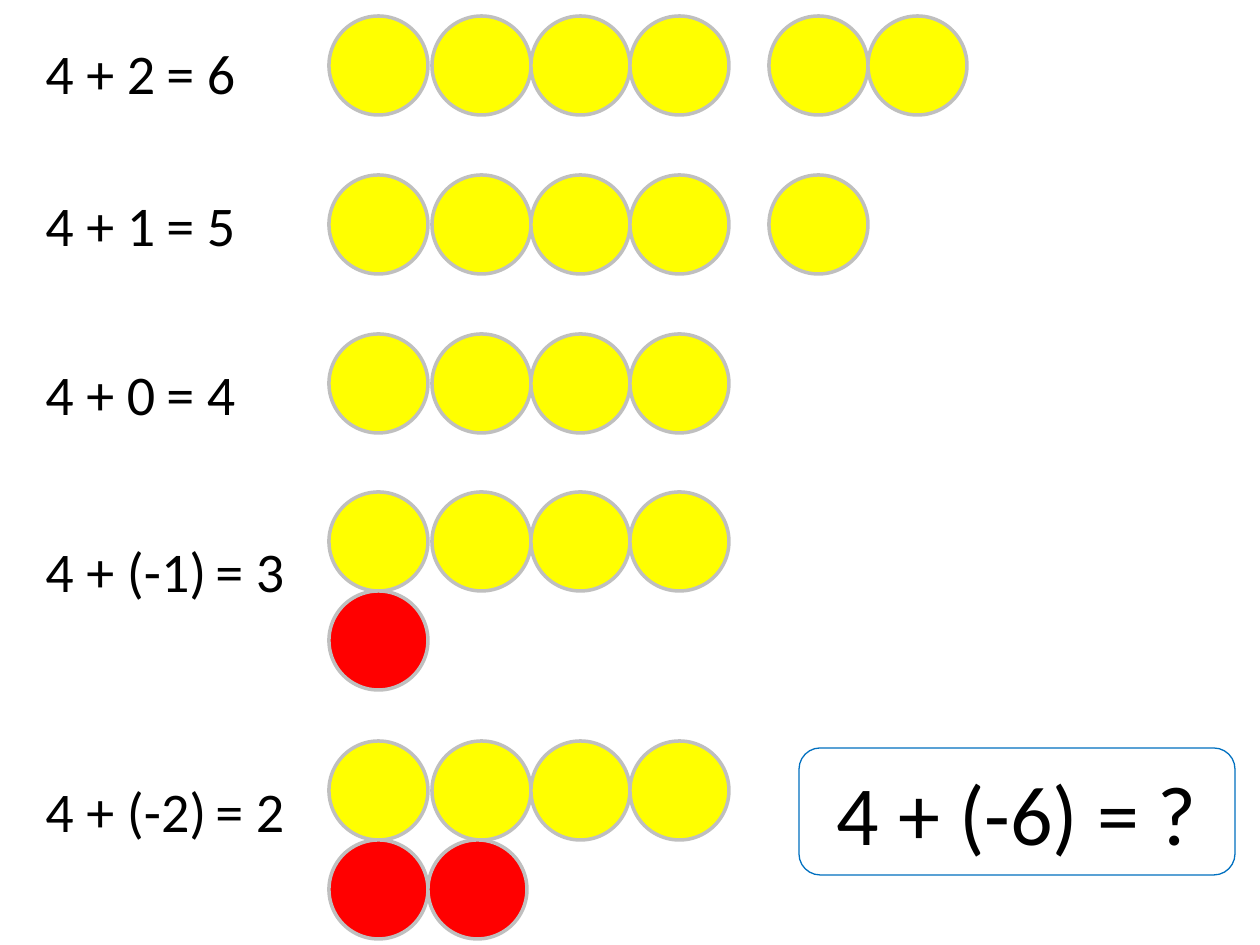
from pptx import Presentation
from pptx.dml.color import RGBColor as RGB
from pptx.enum.shapes import MSO_SHAPE as SHAPE
from pptx.enum.text import MSO_ANCHOR as ANCHOR, PP_ALIGN as ALIGN
from pptx.util import Emu, Inches, Pt

PX = Inches(1) / 126

THEME = {
    "font": "Calibri", "text": "000000",
    "sum_size": 32, "question_size": 48,
    "positive": "FFFF00", "negative": "FF0000",
    "counter_line": "BFBFBF", "counter_line_width": 2,
    "box_line": "0070C0", "box_line_width": 0.75,
}

# sum, result, label top, counter top, number added to four
ROWS = [
    ("4 + 2", "= 6", 32, 16, 2),
    ("4 + 1", "= 5", 184, 175, 1),
    ("4 + 0", "= 4", 353, 334, 0),
    ("4 + (-1)", "= 3", 530, 492, -1),
    ("4 + (-2)", "= 2", 770, 741, -2),
]
QUESTION = "4 + (-6) = ?"
QUESTION_BOX = (799, 748, 436, 127)

SUM_LEFT, RESULT_LEFT, RESULT_LEFT_NEGATIVE = 33, 154, 203
LABEL_W, LABEL_H = 208, 81
COUNTER = 99
COUNTERS_LEFT = 329
FOUR_LEFTS = [COUNTERS_LEFT] + [432 + i * COUNTER for i in range(3)]
ADDED_LEFT = 769


def px(*lengths):
    return [Emu(round(n * PX)) for n in lengths]


def write(shape, text, size, align=ALIGN.LEFT):
    tf = shape.text_frame
    tf.word_wrap = True
    p = tf.paragraphs[0]
    p.alignment = align
    r = p.add_run()
    r.text = text
    r.font.color.rgb = RGB.from_string(THEME["text"])
    for name, value in {"name": THEME["font"], "size": Pt(size)}.items():
        setattr(r.font, name, value)


def outline(shape, kind):
    shape.shadow.inherit = False
    shape.line.color.rgb = RGB.from_string(THEME[f"{kind}_line"])
    shape.line.width = Pt(THEME[f"{kind}_line_width"])


def add_label(s, text, left, top):
    write(s.shapes.add_textbox(*px(left, top, LABEL_W, LABEL_H)), text, THEME["sum_size"])


def add_counters(s, top, added):
    """Four positive counters, then the added ones: beside if positive, below if negative."""
    start, drop, sign = ((ADDED_LEFT, 0, "positive") if added > 0
                         else (COUNTERS_LEFT, COUNTER, "negative"))
    spots = [(left, top, "positive") for left in FOUR_LEFTS]
    spots += [(start + i * COUNTER, top + drop, sign) for i in range(abs(added))]
    group = s.shapes.add_group_shape()
    for left, y, color in spots:
        counter = group.shapes.add_shape(SHAPE.OVAL, *px(left, y, COUNTER, COUNTER))
        counter.fill.solid()
        counter.fill.fore_color.rgb = RGB.from_string(THEME[color])
        outline(counter, "counter")


def main():
    prs = Presentation()
    prs.slide_width, prs.slide_height = px(1260, 945)
    s = prs.slides.add_slide(prs.slide_layouts[6])

    for sum_text, result, label_top, counter_top, added in ROWS:
        add_label(s, sum_text, SUM_LEFT, label_top)
        add_label(s, result, RESULT_LEFT_NEGATIVE if added < 0 else RESULT_LEFT, label_top)
        add_counters(s, counter_top, added)

    box = s.shapes.add_shape(SHAPE.ROUNDED_RECTANGLE, *px(*QUESTION_BOX))
    box.fill.background()
    outline(box, "box")
    write(box, QUESTION, THEME["question_size"], ALIGN.CENTER)
    box.text_frame.vertical_anchor = ANCHOR.MIDDLE

    prs.save("out.pptx")


if __name__ == "__main__":
    main()
